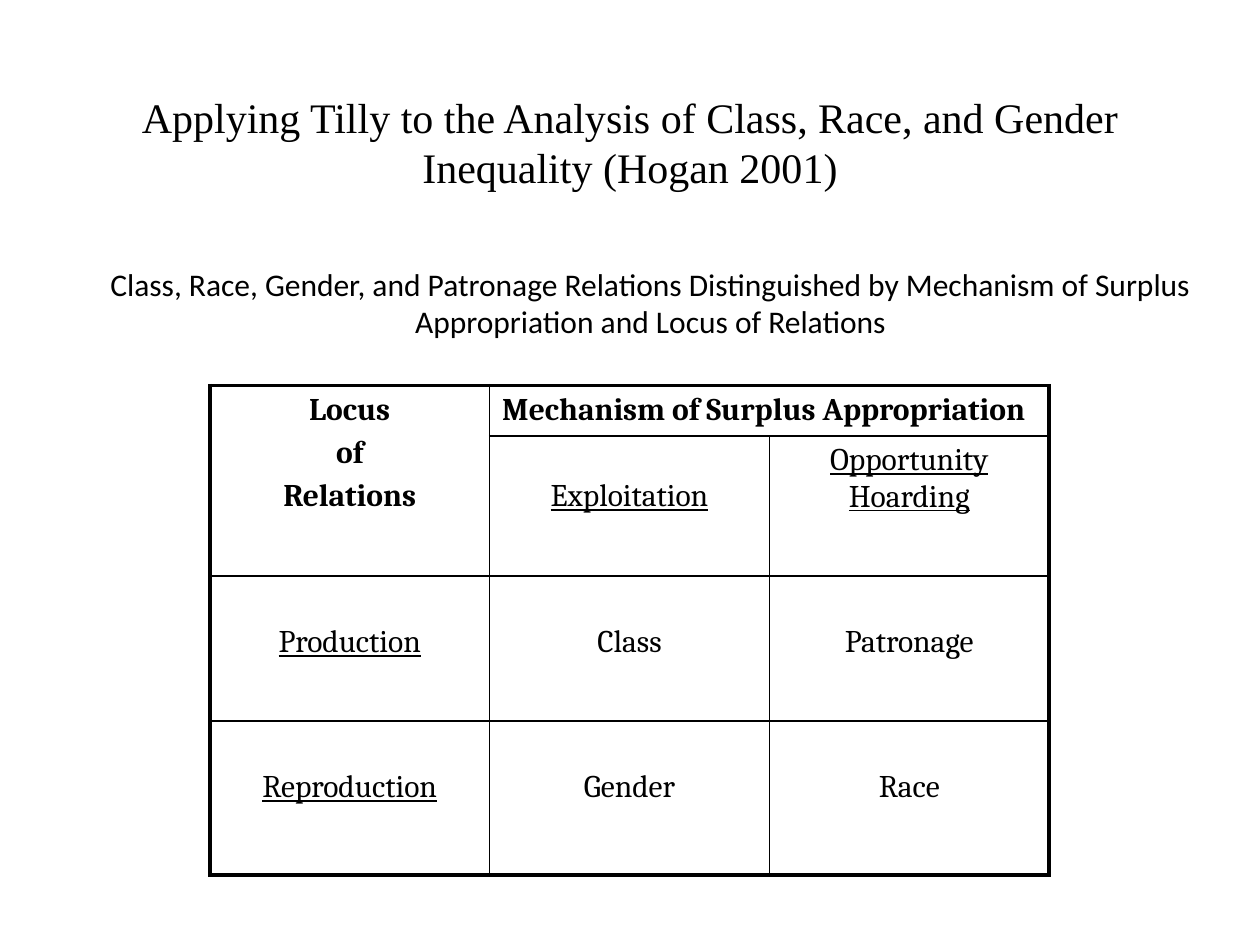
"""Build a slide with a table of class, race, gender and patronage relations."""
from dataclasses import dataclass

from lxml import etree
from pptx import Presentation
from pptx.dml.color import RGBColor
from pptx.enum.text import MSO_ANCHOR, PP_ALIGN
from pptx.oxml.ns import qn
from pptx.util import Cm, Pt

CENTER, LEFT = PP_ALIGN.CENTER, PP_ALIGN.LEFT
TOP, MIDDLE = MSO_ANCHOR.TOP, MSO_ANCHOR.MIDDLE


@dataclass(frozen=True)
class Theme:
    ink: str = "000000"
    title_font: str = "Times New Roman"
    caption_font: str = "Calibri"
    table_font: str = "Cambria"
    title_size: int = 24
    body_size: int = 18
    paragraph_gap: int = 4
    frame_width: float = 2.25
    rule_width: float = 1


THEME = Theme()
HEADINGS = [
    {
        "text": "Applying Tilly to the Analysis of Class, Race, and Gender Inequality (Hogan 2001)",
        "place": (1.27, 1.27, 22.86, 3.18),
        "anchor": MIDDLE, "font": THEME.title_font, "size": THEME.title_size,
    },
    {
        "text": "Class, Race, Gender, and Patronage Relations Distinguished by "
                "Mechanism of Surplus Appropriation and Locus of Relations",
        "place": (1.9, 5.21, 22.43, 1.78),
        "anchor": TOP, "font": THEME.caption_font, "size": THEME.body_size,
    },
]
STYLES = {
    "locus": {"bold": True, "gap": THEME.paragraph_gap},
    "mechanism": {"bold": True, "align": LEFT},
    "column": {"underline": True, "inset": 0.85},
    "wrapped column": {"underline": True},
    "row": {"underline": True, "inset": 0.97},
    "relation": {"inset": 0.97},
}
CELLS = [
    [("locus", ["Locus", "of", "Relations"]), ("mechanism", ["Mechanism of Surplus Appropriation"]), None],
    [None, ("column", ["Exploitation"]), ("wrapped column", ["Opportunity", "Hoarding"])],
    [("row", ["Production"]), ("relation", ["Class"]), ("relation", ["Patronage"])],
    [("row", ["Reproduction"]), ("relation", ["Gender"]), ("relation", ["Race"])],
]
MERGES = [((0, 0), (1, 0)), ((0, 1), (0, 2))]
TABLE_LEFT, TABLE_TOP = 4.23, 7.77
COLUMN_WIDTH = 5.64
ROW_HEIGHTS = [1.0, 2.8, 2.92, 3.1]


def add_span(para, text, font, size, bold=False, underline=False):
    span = para.add_run()
    span.text = text
    span.font.name = font
    span.font.size = Pt(size)
    span.font.bold = bold
    span.font.underline = underline
    span.font.color.rgb = RGBColor.from_string(THEME.ink)


def add_heading(page, text, place, anchor, font, size):
    box = page.shapes.add_textbox(*map(Cm, place))
    frame = box.text_frame
    frame.word_wrap = True
    frame.vertical_anchor = anchor
    para = frame.paragraphs[0]
    para.alignment = CENTER
    add_span(para, text, font, size)


def fill_cell(cell, lines, align=CENTER, gap=0, inset=0.13, bold=False, underline=False):
    cell.margin_top = Cm(inset)
    for number, line in enumerate(lines):
        para = cell.text_frame.add_paragraph() if number else cell.text_frame.paragraphs[0]
        para.alignment = align
        para.space_before = Pt(gap)
        add_span(para, line, THEME.table_font, THEME.body_size, bold, underline)


def draw_borders(cell, outer_sides):
    properties = cell._tc.get_or_add_tcPr()
    for index, side in enumerate("LRTB"):
        width = THEME.frame_width if side in outer_sides else THEME.rule_width
        border = etree.Element(qn(f"a:ln{side}"), w=str(Pt(width)))
        fill = etree.SubElement(border, qn("a:solidFill"))
        etree.SubElement(fill, qn("a:srgbClr"), val=THEME.ink)
        properties.insert(index, border)


def add_relations_table(page):
    row_count, column_count = len(CELLS), len(CELLS[0])
    frame = page.shapes.add_table(
        row_count, column_count, Cm(TABLE_LEFT), Cm(TABLE_TOP),
        Cm(COLUMN_WIDTH * column_count), Cm(sum(ROW_HEIGHTS)))
    table = frame.table
    table.first_row = table.horz_banding = False
    for column in table.columns:
        column.width = Cm(COLUMN_WIDTH)
    for row, height in zip(table.rows, ROW_HEIGHTS):
        row.height = Cm(height)
    for first, last in MERGES:
        table.cell(*first).merge(table.cell(*last))
    for row, contents in enumerate(CELLS):
        for column, content in enumerate(contents):
            cell = table.cell(row, column)
            cell.fill.background()
            bottom = row + (cell.span_height if cell.is_merge_origin else 1)
            right = column + (cell.span_width if cell.is_merge_origin else 1)
            edges = {"L": column == 0, "R": right == column_count,
                     "T": row == 0, "B": bottom == row_count}
            draw_borders(cell, [side for side, outer in edges.items() if outer])
            if content:
                style, lines = content
                fill_cell(cell, lines, **STYLES[style])


def main():
    deck = Presentation()
    deck.slide_width, deck.slide_height = Cm(25.4), Cm(19.05)
    page = deck.slides.add_slide(deck.slide_layouts[6])
    for heading in HEADINGS:
        add_heading(page, **heading)
    add_relations_table(page)
    deck.save("out.pptx")


if __name__ == "__main__":
    main()
